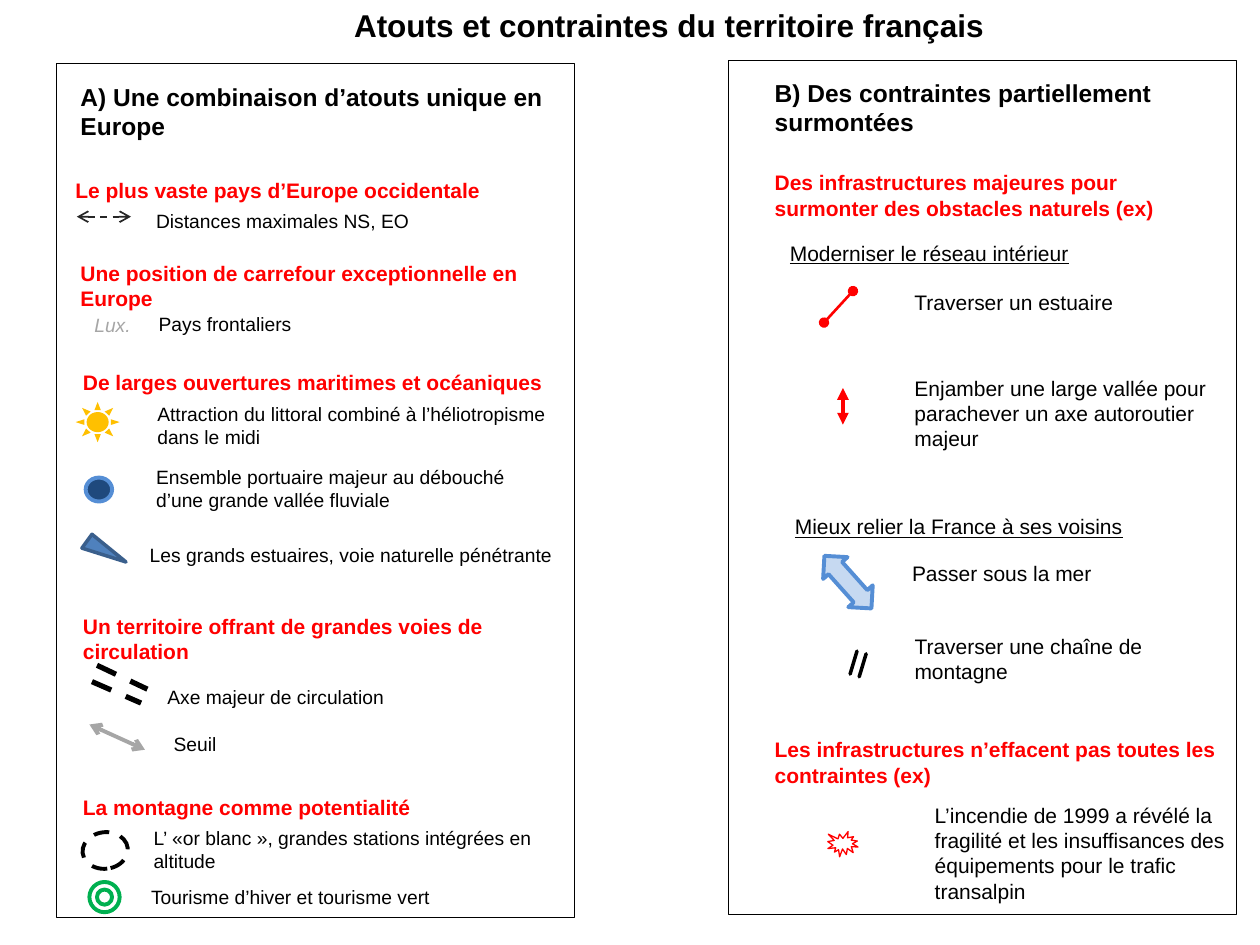
from dataclasses import dataclass

from lxml.etree import SubElement
from pptx import Presentation
from pptx.dml.color import RGBColor
from pptx.enum.dml import MSO_LINE
from pptx.enum.shapes import MSO_CONNECTOR, MSO_SHAPE as SHAPE
from pptx.enum.text import MSO_AUTO_SIZE, PP_ALIGN
from pptx.oxml.ns import qn
from pptx.util import Inches, Pt

CELL = Inches(0.1)  # the slide is a grid of 100 columns by 75 rows
COLS, ROWS = 100, 75


@dataclass(frozen=True)
class Theme:
    font: str = "Arial"
    black: str = "000000"
    red: str = "FF0000"
    grey: str = "A6A6A6"
    dark: str = "262626"
    sun: str = "FFC000"
    port: str = "1F497D"
    sea: str = "558ED5"
    pale: str = "C6D9F1"
    estuary: str = "4F81BD"
    estuary_edge: str = "3A5F8C"
    green: str = "00B050"
    title: int = 18
    panel: int = 14
    body: int = 12
    small: int = 11


T = Theme()
HEADING = dict(size=T.body, color=T.red, bold=True)
PANEL_TITLE = dict(size=T.panel, bold=True)


@dataclass(frozen=True)
class Box:
    left: float
    top: float
    width: float
    height: float

    def point(self, x, y):
        return round((self.left + x) * CELL), round((self.top + y) * CELL)

    def place(self, x, y, w, h):
        return *self.point(x, y), round(w * CELL), round(h * CELL)


def add_text(slide, box, at, text, size=T.body, color=T.black, bold=False,
             italic=False, underline=False, align=PP_ALIGN.LEFT):
    tf = slide.shapes.add_textbox(*box.place(*at)).text_frame
    tf.word_wrap = True
    tf.auto_size = MSO_AUTO_SIZE.SHAPE_TO_FIT_TEXT
    p = tf.paragraphs[0]
    p.alignment = align
    r = p.add_run()
    r.text = text
    font = r.font
    font.name, font.size = T.font, Pt(size)
    font.bold, font.italic, font.underline = bold, italic, underline
    font.color.rgb = RGBColor.from_string(color)


def add_texts(slide, box, items, **fmt):
    for *at, text in items:
        add_text(slide, box, at, text, **fmt)


def set_line(line, color, width, dash=False):
    if color is None:
        line.fill.background()
        return
    line.color.rgb = RGBColor.from_string(color)
    line.width = Pt(width)
    if dash:
        line.dash_style = MSO_LINE.DASH


def style(sp, fill=None, line=None, width=2.25, dash=False):
    sp.shadow.inherit = False
    if fill:
        sp.fill.solid()
        sp.fill.fore_color.rgb = RGBColor.from_string(fill)
    else:
        sp.fill.background()
    set_line(sp.line, line, width, dash)


def add_symbol(slide, box, at, kind, rotation=0, adjust=(), **look):
    sp = slide.shapes.add_shape(kind, *box.place(*at))
    sp.rotation = rotation
    for i, value in enumerate(adjust):
        sp.adjustments[i] = value
    style(sp, **look)


def add_line(slide, box, start, end, color, width, dash=False, ends=None):
    """Draw a straight line, with the same arrowhead at both ends if given."""
    sp = slide.shapes.add_connector(
        MSO_CONNECTOR.STRAIGHT, *box.point(*start), *box.point(*end))
    set_line(sp.line, color, width, dash)
    sp_pr = sp._element.spPr
    if ends:
        ln = sp_pr.find(qn("a:ln"))
        for tag in ("a:headEnd", "a:tailEnd"):
            SubElement(ln, qn(tag)).set("type", ends)
    SubElement(sp_pr, qn("a:effectLst"))


def add_triangle(slide, box, points, **look):
    first, *rest = [box.point(*pt) for pt in points]
    builder = slide.shapes.build_freeform(*first)
    builder.add_line_segments(rest, close=True)
    style(builder.convert_to_shape(), **look)


def add_frame(slide, box):
    add_symbol(slide, box, (0, 0, box.width, box.height), SHAPE.RECTANGLE,
               line=T.black, width=0.25)


def add_assets(slide, box):
    add_text(slide, box, (0.9, 1, 39.5, 5.7),
             "A) Une combinaison d’atouts unique en Europe", **PANEL_TITLE)
    add_texts(slide, box, [
        (0.5, 8.6, 37.7, 3, "Le plus vaste pays d’Europe occidentale"),
        (0.9, 15.2, 39.5, 5, "Une position de carrefour exceptionnelle en Europe"),
        (1.1, 23.8, 39.3, 3, "De larges ouvertures maritimes et océaniques"),
        (1.1, 43.2, 39.3, 5, "Un territoire offrant de grandes voies de circulation"),
        (1.1, 57.6, 39.3, 3, "La montagne comme potentialité"),
    ], **HEADING)
    add_texts(slide, box, [
        (6.9, 11.1, 33.5, 2.9, "Distances maximales NS, EO"),
        (7.1, 19.3, 16.1, 2.8, "Pays frontaliers"),
        (7, 26.4, 33.5, 4.7,
         "Attraction du littoral combiné à l’héliotropisme dans le midi"),
        (6.9, 31.4, 33.5, 4.7,
         "Ensemble portuaire majeur au débouché d’une grande vallée fluviale"),
        (6.4, 37.6, 37, 2.8, "Les grands estuaires, voie naturelle pénétrante"),
        (7.8, 48.9, 22.5, 2.9, "Axe majeur de circulation"),
        (8.3, 52.6, 6.6, 2.9, "Seuil"),
        (6.7, 60.1, 33.8, 4.7,
         "L’ «or blanc », grandes stations intégrées en altitude"),
        (6.5, 64.8, 33.8, 2.8, "Tourisme d’hiver et tourisme vert"),
    ], size=T.small)
    add_text(slide, box, (2, 19.4, 5.2, 2.8), "Lux.",
             size=T.small, color=T.grey, italic=True)

    add_line(slide, box, (1.6, 12.2), (5.9, 12.2), T.dark, 1, dash=True, ends="arrow")
    add_symbol(slide, box, (1.5, 26.9, 3.5, 3.2), SHAPE.SUN, fill=T.sun)
    add_symbol(slide, box, (2.3, 32.9, 2.1, 1.9), SHAPE.OVAL, fill=T.port, line=T.sea)
    add_triangle(slide, box, [(2, 38.5), (5.5, 39.6), (2.8, 37.4)],
                 fill=T.estuary, line=T.estuary_edge, width=2)
    for start, end in [((3.2, 47.8), (7.2, 49.7)), ((2.8, 49.1), (6.7, 50.8))]:
        add_line(slide, box, start, end, T.black, 3, dash=True)
    add_line(slide, box, (2.6, 52.5), (7, 54.5), T.grey, 2.25, ends="arrow")
    add_symbol(slide, box, (2.4, 60.7, 2.9, 3.6), SHAPE.OVAL, rotation=263.5,
               line=T.black, dash=True)
    add_symbol(slide, box, (2.6, 65, 2.4, 2.4), SHAPE.DONUT, line=T.green)
    add_frame(slide, box)


def add_constraints(slide, box):
    add_text(slide, box, (2.7, 0.9, 39.5, 5.7),
             "B) Des contraintes partiellement surmontées", **PANEL_TITLE)
    add_texts(slide, box, [
        (2.7, 8.2, 34, 5,
         "Des infrastructures majeures pour surmonter des obstacles naturels (ex)"),
        (2.7, 53.2, 39.5, 5,
         "Les infrastructures n’effacent pas toutes les contraintes (ex)"),
    ], **HEADING)
    add_texts(slide, box, [
        (3.9, 13.8, 30.8, 3, "Moderniser le réseau intérieur"),
        (4.3, 35.5, 30.8, 3, "Mieux relier la France à ses voisins"),
    ], underline=True)
    add_texts(slide, box, [
        (13.8, 17.7, 28.4, 3, "Traverser un estuaire"),
        (13.8, 24.5, 28.4, 7.1,
         "Enjamber une large vallée pour parachever un axe autoroutier majeur"),
        (13.6, 39.2, 23.6, 3, "Passer sous la mer"),
        (13.8, 45, 22.9, 5, "Traverser une chaîne de montagne"),
        (15.4, 58.4, 26.8, 9.1, "L’incendie de 1999 a révélé la fragilité et les "
         "insuffisances des équipements pour le trafic transalpin"),
    ])

    add_line(slide, box, (7.6, 20.8), (9.9, 18.3), T.red, 1.5, ends="oval")
    add_line(slide, box, (9.1, 26), (9.1, 28.9), T.red, 2.25, ends="triangle")
    add_symbol(slide, box, (8.2, 38.6, 2.6, 5.6), SHAPE.UP_DOWN_ARROW,
               rotation=318.2, adjust=(0.43, 0.56), fill=T.pale, line=T.sea)
    add_symbol(slide, box, (9, 45.8, 2.6, 4.2), SHAPE.MATH_EQUAL,
               rotation=106.7, adjust=(0, 0.18), fill=T.black, line=T.black, width=2)
    add_symbol(slide, box, (7.9, 61.2, 2.4, 2), SHAPE.EXPLOSION1,
               line=T.red, width=0.75)
    add_frame(slide, box)


def main():
    prs = Presentation()
    prs.slide_width, prs.slide_height = COLS * CELL, ROWS * CELL
    slide = prs.slides.add_slide(prs.slide_layouts[6])
    add_text(slide, Box(0, 0, COLS, ROWS), (11.7, 0, 82.8, 4),
             "Atouts et contraintes du territoire français",
             size=T.title, bold=True, align=PP_ALIGN.CENTER)
    add_assets(slide, Box(4.5, 5, 41.1, 67.8))
    add_constraints(slide, Box(57.8, 4.8, 40.3, 67.8))
    prs.save("out.pptx")


if __name__ == "__main__":
    main()
